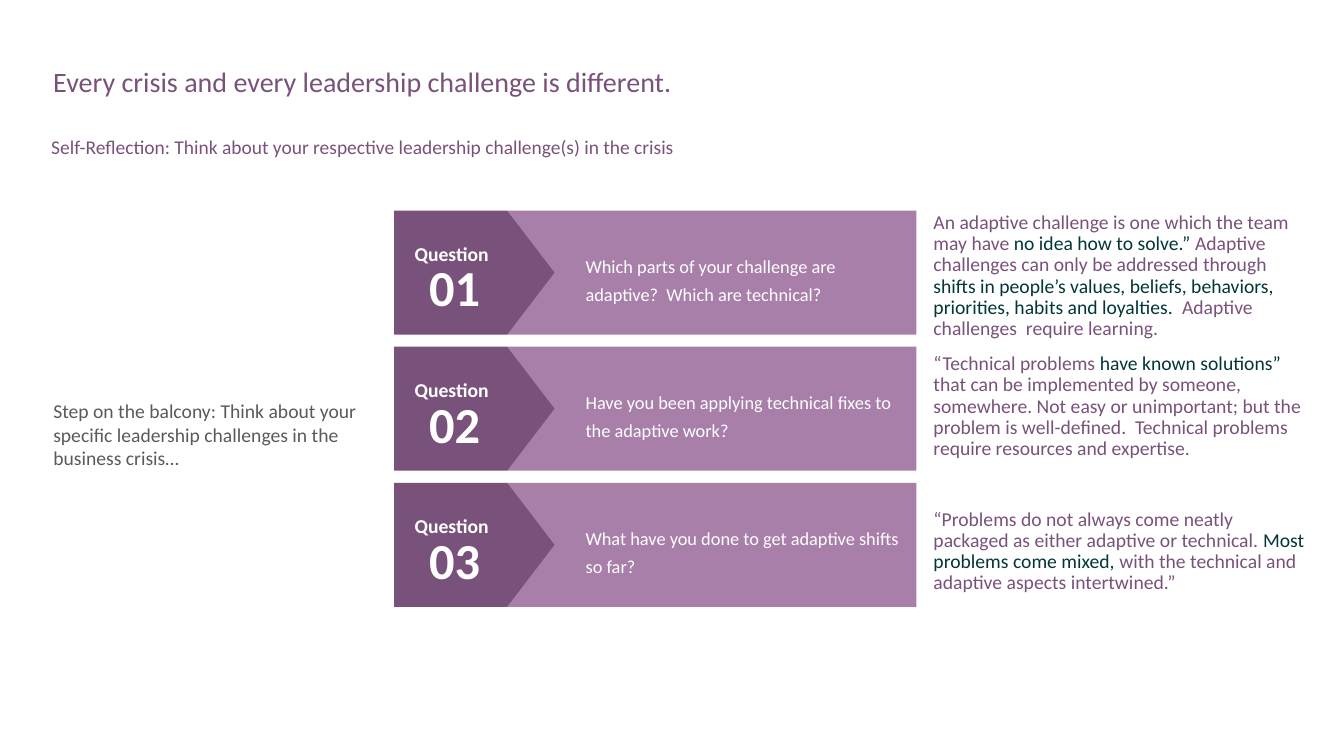
"""Build the leadership self-reflection slide with three question banners."""
from pptx import Presentation
from pptx.dml.color import RGBColor
from pptx.enum import text
from pptx.util import Inches, Pt

COLORS = {"plum": "79527B", "mauve": "A77FA9", "teal": "033637", "gray": "595A59", "white": "FFFFFF"}
FONT = "Calibri"
TITLE = "Every crisis and every leadership challenge is different."
SUBTITLE = "Self-Reflection: Think about your respective leadership challenge(s) in the crisis"
BALCONY = "Step on the balcony: Think about your specific leadership challenges in the business crisis…"
QUESTIONS = [
    "Which parts of your challenge are adaptive?  Which are technical?",
    "Have you been applying technical fixes to the adaptive work?",
    "What have you done to get adaptive shifts so far?",
]
NOTES = [
    (0, [("An adaptive challenge is one which the team may have ", "plum"),
         ("no idea how to solve.” ", "teal"),
         ("Adaptive challenges can only be addressed through ", "plum"),
         ("shifts in people’s values, beliefs, behaviors, priorities, habits and loyalties.  ", "teal"),
         ("Adaptive challenges  require learning.", "plum")]),
    (10, [("“Technical problems ", "plum"),
          ("have known solutions” ", "teal"),
          ("that can be implemented by someone, somewhere. Not easy or unimportant; but the "
           "problem is well-defined.  Technical problems require resources and expertise.", "plum")]),
    (35.4, [("“Problems do not always come neatly packaged as either adaptive or technical. ", "plum"),
            ("Most problems come mixed, ", "teal"),
            ("with the technical and adaptive aspects intertwined.”", "plum")]),
]
ROW_TOP, ROW_PITCH, ROW_H = 2.09, 1.35, 1.23
LEFT, SPLIT, RIGHT = 3.91, 5.03, 9.09
NOTCH, TIP = 5.46, 5.5


def rgb(name):
    return RGBColor.from_string(COLORS[name])


def add_box(s, left, top, width, height, wrap=True, middle=False, inset=True):
    tf = s.shapes.add_textbox(*map(Inches, (left, top, width, height))).text_frame
    tf.word_wrap = wrap
    if middle:
        tf.vertical_anchor = text.MSO_ANCHOR.MIDDLE
    if not inset:
        tf.margin_left = tf.margin_right = tf.margin_top = tf.margin_bottom = 0
    return tf


def style(p, size, spacing=None, color=None, bold=False, center=False):
    p.font.name, p.font.size, p.font.bold = FONT, Pt(size), bold
    if color:
        p.font.color.rgb = rgb(color)
    if spacing:
        p.line_spacing = spacing
    if center:
        p.alignment = text.PP_ALIGN.CENTER


def add_line(tf, words, size, **look):
    p = tf.paragraphs[0]
    p.text = words
    style(p, size, **look)


def add_outline(s, points, color):
    pts = [(Inches(x), Inches(y)) for x, y in points]
    builder = s.shapes.build_freeform(*pts[0], scale=1.0)
    builder.add_line_segments(pts[1:], close=True)
    sp = builder.convert_to_shape()
    sp.shadow.inherit = False
    sp.fill.solid()
    sp.fill.fore_color.rgb = rgb(color)
    sp.line.fill.background()


def add_question(s, number, question):
    top = ROW_TOP + (number - 1) * ROW_PITCH
    mid, bottom = top + ROW_H / 2, top + ROW_H
    add_outline(s, [(SPLIT, top), (NOTCH, mid), (SPLIT, bottom), (RIGHT, bottom), (RIGHT, top)], "mauve")
    add_outline(s, [(SPLIT, bottom), (LEFT, bottom), (LEFT, top), (SPLIT, top), (TIP, mid)], "plum")
    add_line(add_box(s, 4.01, top + 0.26, 0.94, 0.34, wrap=False), "Question", 14,
             color="white", bold=True, center=True)
    add_line(add_box(s, 4.24, top + 0.45, 0.54, 0.61, wrap=False, middle=True, inset=False),
             f"{number:02d}", 36, color="white", bold=True, center=True)
    add_line(add_box(s, 5.71, top + 0.33, 3.38, 0.57), question, 13.1, color="white", spacing=1.27)


def add_notes(s):
    tf = add_box(s, 9.16, 2.06, 3.88, 4.53)
    for i, (gap, runs) in enumerate(NOTES):
        p = tf.add_paragraph() if i else tf.paragraphs[0]
        style(p, 14, spacing=0.9)
        if gap:
            p.space_before = Pt(gap)
        for words, color in runs:
            r = p.add_run()
            r.text = words
            r.font.color.rgb = rgb(color)


def main():
    prs = Presentation()
    prs.slide_width, prs.slide_height = Inches(13.33), Inches(7.5)
    s = prs.slides.add_slide(prs.slide_layouts[6])
    add_line(add_box(s, 0.43, 1.79, 3.49, 5.04, middle=True), BALCONY, 14, color="gray")
    add_line(add_box(s, 0.43, 0.63, 12.54, 0.64), TITLE, 20, color="plum", spacing=0.9)
    add_line(add_box(s, 0.41, 1.35, 12.56, 0.28), SUBTITLE, 13.9, color="plum", spacing=0.7)
    for number, question in enumerate(QUESTIONS, 1):
        add_question(s, number, question)
    add_notes(s)
    prs.save("out.pptx")


if __name__ == "__main__":
    main()
